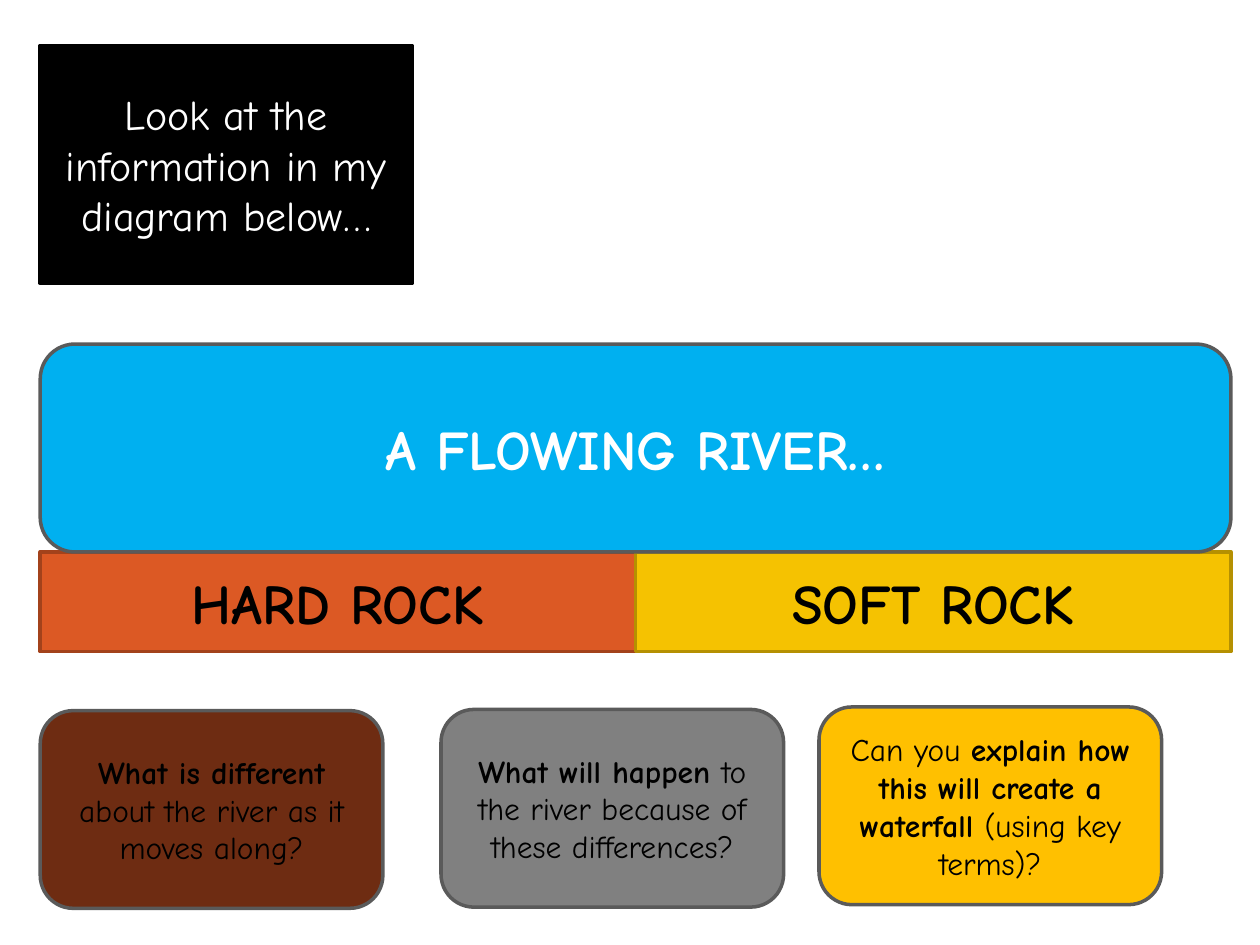
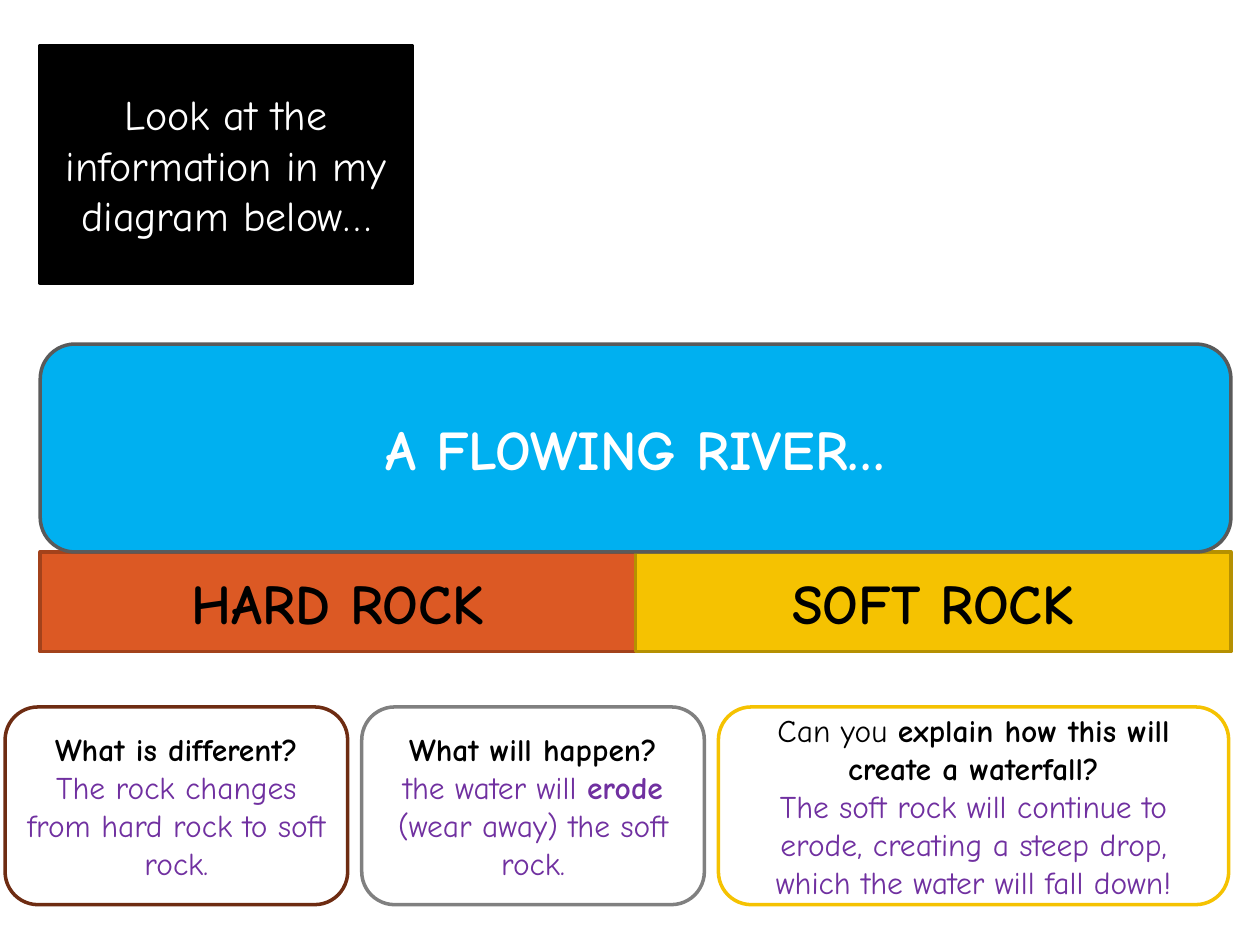
from pptx import Presentation
from pptx.dml.color import RGBColor
from pptx.enum.shapes import MSO_SHAPE
from pptx.enum.text import MSO_ANCHOR, PP_ALIGN
from pptx.util import Pt

RECTANGLE = MSO_SHAPE.RECTANGLE
ROUNDED = MSO_SHAPE.ROUNDED_RECTANGLE
MIDDLE = MSO_ANCHOR.MIDDLE
CENTER = PP_ALIGN.CENTER

FONT = "Comic Neue"
BLANK_LAYOUT = 6
COLORS = {
    "black": "000000",
    "white": "FFFFFF",
    "river": "00B0F0",
    "outline": "5A5A5A",
    "hard rock": "DC5924",
    "hard rock edge": "A3421B",
    "soft rock": "F5C201",
    "soft rock edge": "B59001",
    "brown": "6E2C12",
    "grey": "808080",
    "gold": "FFC000",
    "answer": "7030A0",
}

PROMPT_BOX = (23, 26, 212.4, 136)
DIAGRAM_BOX = (23, 196.6, 680.4, 175.7)
RIVER_HEIGHT = 118.8
CARD_WIDTH, CARD_HEIGHT = 195.8, 113
CARD_TOP = 404
WIDE_CARD_WIDTH = 291.6
ANSWER_LEFT, ANSWER_GAP = 2.9, 8

# Each card paragraph is a list of (text, bold, colour) runs.
QUESTIONS = [
    (23, 406.1, "brown", [[("What is different ", True, "black"),
                           ("about the river as it moves along?", False, "black")]]),
    (252, 405.4, "grey", [[("What will happen ", True, "black"),
                           ("to the river because of these differences?", False, "black")]]),
    (468, CARD_TOP, "gold", [[("Can you ", False, "black"),
                              ("explain how this will create a waterfall ", True, "black"),
                              ("(using key terms)?", False, "black")]]),
]
ANSWERS = [
    (CARD_WIDTH, "brown", [
        [("What is different?", True, "black")],
        [("The rock changes from hard rock to soft rock.", False, "answer")]]),
    (CARD_WIDTH, "grey", [
        [("What will happen? ", True, "black"), ("the water will ", False, "answer"),
         ("erode", True, "answer"), (" (wear away) the soft rock.", False, "answer")]]),
    (WIDE_CARD_WIDTH, "soft rock", [
        [("Can you ", False, "black"),
         ("explain how this will create a waterfall?", True, "black")],
        [("The soft rock will continue to erode, creating a steep drop, "
          "which the water will fall down!", False, "answer")]]),
]


def rgb(name):
    """Return the named colour."""
    return RGBColor.from_string(COLORS[name])


def add_panel(slide, kind, box, fill, line, paragraphs, size):
    """Draw a filled, outlined shape with centred runs of text."""
    shape = slide.shapes.add_shape(kind, *(Pt(length) for length in box))
    shape.shadow.inherit = False
    shape.fill.solid()
    shape.fill.fore_color.rgb = rgb(fill)
    shape.line.color.rgb = rgb(line)
    shape.line.width = Pt(2)
    frame = shape.text_frame
    frame.word_wrap = True
    frame.vertical_anchor = MIDDLE
    for index, runs in enumerate(paragraphs):
        paragraph = frame.add_paragraph() if index else frame.paragraphs[0]
        paragraph.alignment = CENTER
        for text, bold, color in runs:
            run = paragraph.add_run()
            run.text = text
            run.font.name = FONT
            run.font.size = Pt(size)
            run.font.bold = bold
            run.font.color.rgb = rgb(color)


def add_diagram(slide, box):
    """Draw the river across the top of the box and two rock halves below it."""
    left, top, width, height = box
    half = width / 2
    rocks = [("HARD ROCK", "hard rock"), ("SOFT ROCK", "soft rock")]
    for index, (label, color) in enumerate(rocks):
        rock_box = (left + index * half, top + RIVER_HEIGHT, half, height - RIVER_HEIGHT)
        add_panel(slide, RECTANGLE, rock_box, color, f"{color} edge",
                  [[(label, True, "black")]], 32)
    add_panel(slide, ROUNDED, (left, top, width, RIVER_HEIGHT), "river", "outline",
              [[("A FLOWING RIVER…", True, "white")]], 32)


def add_river_slide(presentation):
    """Add a slide with the shared prompt and river diagram."""
    slide = presentation.slides.add_slide(presentation.slide_layouts[BLANK_LAYOUT])
    add_diagram(slide, DIAGRAM_BOX)
    add_panel(slide, RECTANGLE, PROMPT_BOX, "black", "black",
              [[("Look at the information in my diagram below…", False, "white")]], 24)
    return slide


def add_question_slide(presentation):
    """Add the river slide with its three coloured question cards."""
    slide = add_river_slide(presentation)
    for left, top, fill, paragraphs in QUESTIONS:
        add_panel(slide, ROUNDED, (left, top, CARD_WIDTH, CARD_HEIGHT),
                  fill, "outline", paragraphs, 18)


def add_answer_slide(presentation):
    """Add the river slide with its row of white answer cards."""
    slide = add_river_slide(presentation)
    left = ANSWER_LEFT
    for width, line, paragraphs in ANSWERS:
        add_panel(slide, ROUNDED, (left, CARD_TOP, width, CARD_HEIGHT),
                  "white", line, paragraphs, 18)
        left += width + ANSWER_GAP


def main():
    """Build and save the two slides."""
    presentation = Presentation()
    presentation.slide_width = Pt(720)
    presentation.slide_height = Pt(540)
    add_question_slide(presentation)
    add_answer_slide(presentation)
    presentation.save("out.pptx")


if __name__ == "__main__":
    main()
